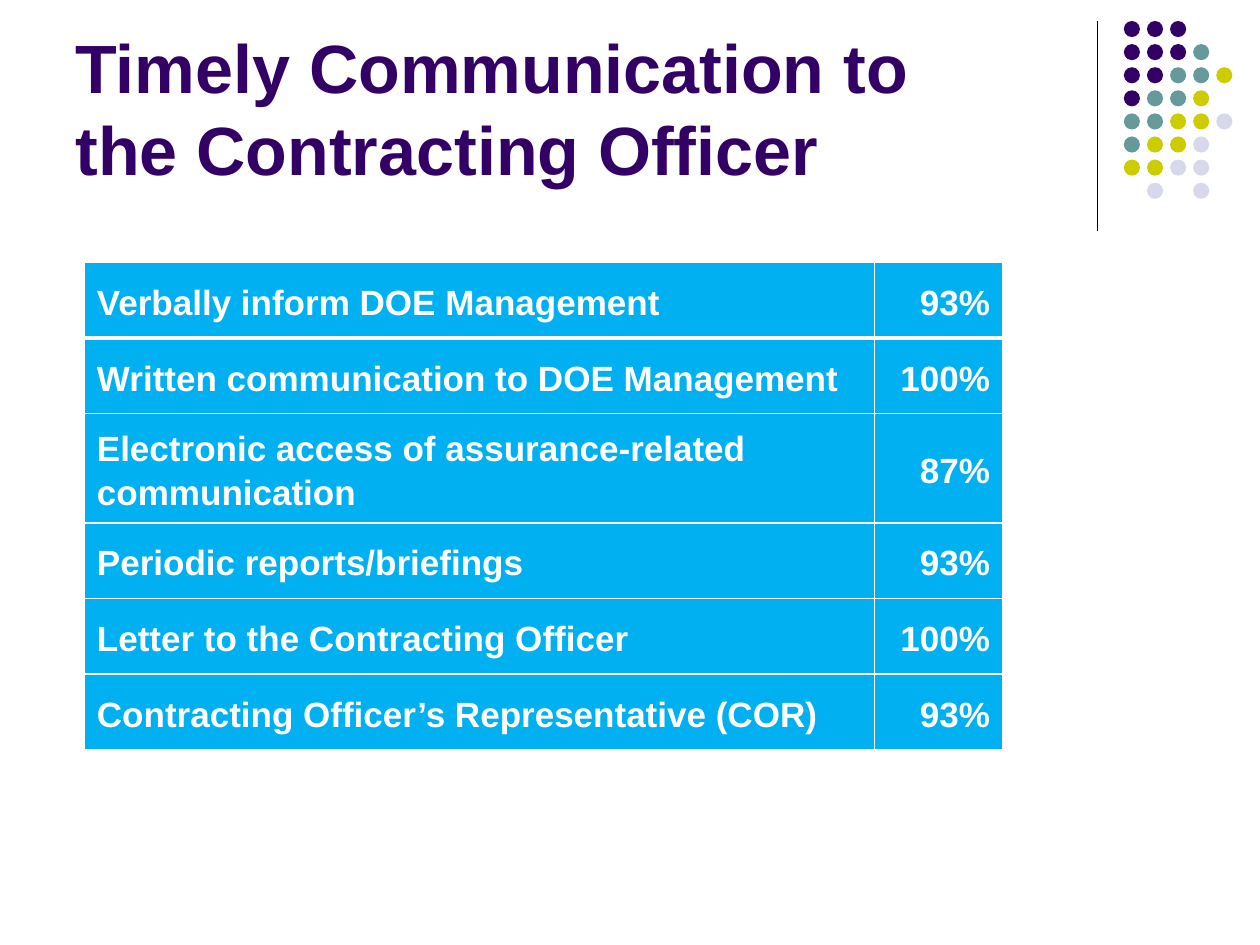
from lxml import etree
from pptx import Presentation
from pptx.dml.color import RGBColor
from pptx.enum.shapes import MSO_CONNECTOR, MSO_SHAPE
from pptx.enum.text import MSO_ANCHOR, PP_ALIGN
from pptx.oxml.ns import qn
from pptx.util import Pt

STRAIGHT = MSO_CONNECTOR.STRAIGHT
OVAL = MSO_SHAPE.OVAL
BOTTOM, MIDDLE = MSO_ANCHOR.BOTTOM, MSO_ANCHOR.MIDDLE
LEFT, RIGHT = PP_ALIGN.LEFT, PP_ALIGN.RIGHT

COLORS = {
    "purple": "330066",
    "teal": "669999",
    "olive": "CCCC00",
    "lavender": "D8D8EC",
    "blue": "00B0F0",
    "white": "FFFFFF",
    "black": "000000",
}
DOT_COLORS = {"P": "purple", "T": "teal", "O": "olive", "L": "lavender"}
DOT_ROWS = ["PPP", "PPPT", "PPTTO", "PTTO", "TTOOL", "TOOL", "OOLL", " L L"]
RESULTS = [
    ("Verbally inform DOE Management", "93%"),
    ("Written communication to DOE Management", "100%"),
    ("Electronic access of assurance-related communication", "87%"),
    ("Periodic reports/briefings", "93%"),
    ("Letter to the Contracting Officer", "100%"),
    ("Contracting Officer’s Representative (COR)", "93%"),
]


class SlideBuilder:
    """Draws styled elements on the current slide."""

    def __init__(self, slide, font="Arial"):
        self.slide = slide
        self.font = font

    def color(self, name):
        return RGBColor.from_string(COLORS[name])

    def add_text(self, frame, text, size, color, align=LEFT, spacing=None):
        paragraph = frame.paragraphs[0]
        paragraph.alignment = align
        paragraph.line_spacing = spacing
        run = paragraph.add_run()
        run.text = text
        run.font.name = self.font
        run.font.size = Pt(size)
        run.font.bold = True
        run.font.color.rgb = self.color(color)

    def title(self, text, left, top, width, height):
        frame = self.slide.shapes.add_textbox(
            Pt(left), Pt(top), Pt(width), Pt(height)).text_frame
        frame.word_wrap = True
        frame.vertical_anchor = BOTTOM
        self.add_text(frame, text, 39, "purple")

    def rule(self, x, top, bottom):
        line = self.slide.shapes.add_connector(
            STRAIGHT, Pt(x), Pt(top), Pt(x), Pt(bottom))
        line.line.color.rgb = self.color("black")
        line.line.width = Pt(0.75)
        etree.SubElement(line._element.spPr, qn("a:effectLst"))

    def dots(self, rows, left, top, pitch, size):
        group = self.slide.shapes.add_group_shape()
        for row, codes in enumerate(rows):
            for column, code in enumerate(codes):
                if code == " ":
                    continue
                dot = group.shapes.add_shape(
                    OVAL, Pt(left + column * pitch), Pt(top + row * pitch),
                    Pt(size), Pt(size))
                dot.shadow.inherit = False
                dot.fill.solid()
                dot.fill.fore_color.rgb = self.color(DOT_COLORS[code])
                dot.line.fill.background()

    def borders(self, cell, widths):
        properties = cell._tc.get_or_add_tcPr()
        for side, width in widths.items():
            edge = etree.SubElement(
                properties, qn(f"a:ln{side}"), w=str(Pt(width)))
            fill = etree.SubElement(edge, qn("a:solidFill"))
            etree.SubElement(fill, qn("a:srgbClr"), val=COLORS["white"])

    def table(self, rows, left, top, widths, row_height):
        table = self.slide.shapes.add_table(
            len(rows), len(widths), Pt(left), Pt(top),
            Pt(sum(widths)), Pt(row_height * len(rows))).table
        for column, width in zip(table.columns, widths):
            column.width = Pt(width)
        for index, values in enumerate(rows):
            table.rows[index].height = Pt(row_height)
            edges = {"L": 1, "R": 1, "T": 3 if index == 1 else 1,
                     "B": 3 if index == 0 else 1}
            for column, (text, align) in enumerate(zip(values, (LEFT, RIGHT))):
                cell = table.cell(index, column)
                self.borders(cell, edges)
                cell.fill.solid()
                cell.fill.fore_color.rgb = self.color("blue")
                cell.vertical_anchor = MIDDLE
                self.add_text(cell.text_frame, text, 20, "white", align, 1.15)


def main():
    deck = Presentation()
    deck.slide_width, deck.slide_height = Pt(720), Pt(540)
    builder = SlideBuilder(deck.slides.add_slide(deck.slide_layouts[6]))
    builder.rule(627, 12, 132)
    builder.dots(DOT_ROWS, left=642.2, top=12, pitch=13.2, size=9.2)
    builder.title("Timely Communication to the Contracting Officer",
                  36, 9.4, 522, 102.2)
    builder.table(RESULTS, 48.2, 150, (451.4, 73.4), 43.2)
    deck.save("out.pptx")


if __name__ == "__main__":
    main()
